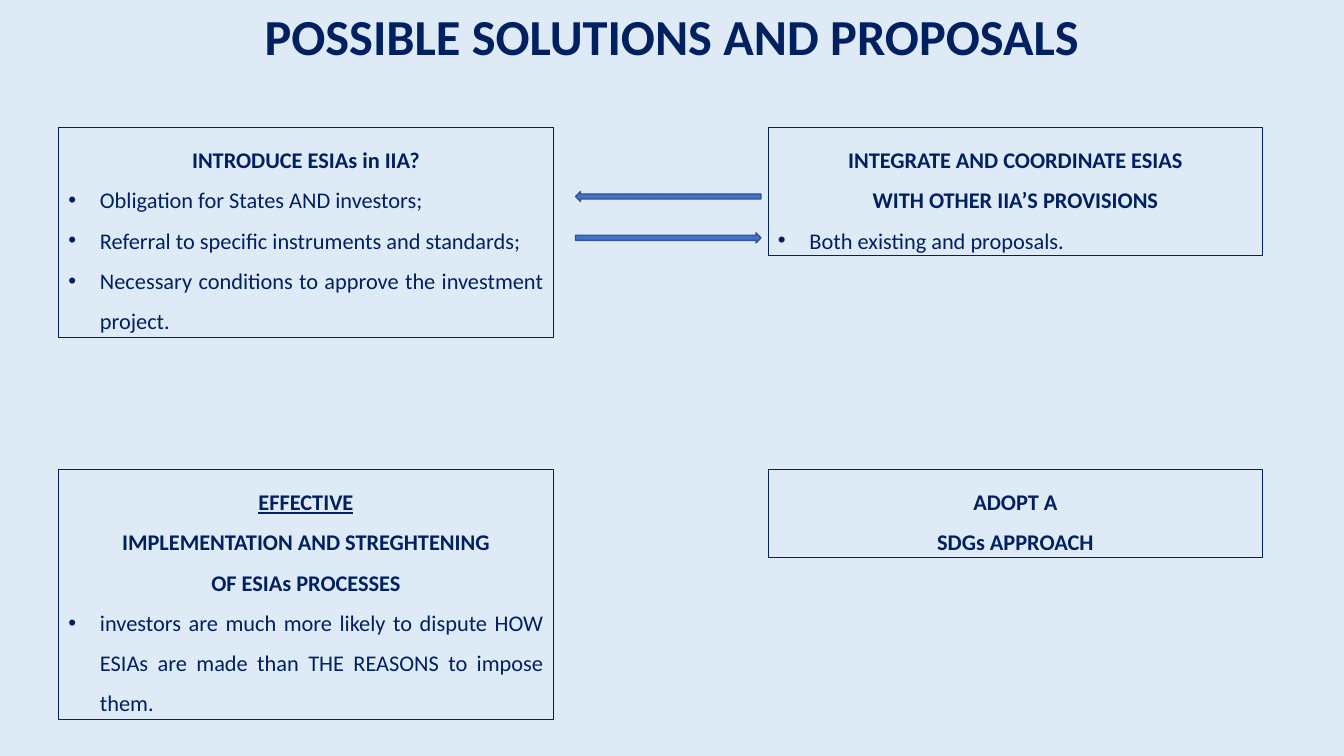
"""Build the slide of possible solutions and proposals."""
import pptx
import pptx.util
import pptx.dml.color
import pptx.enum.shapes
import pptx.enum.text
import pptx.oxml.ns
from lxml import etree

Pt = pptx.util.Pt
Align = pptx.enum.text.PP_ALIGN
Shape = pptx.enum.shapes.MSO_SHAPE
NAVY, BLUE, EDGE, PALE = "002060", "4472C4", "325491", "DEEBF7"

TITLE = "POSSIBLE SOLUTIONS AND PROPOSALS"
COLS, ROWS, WIDTH = (41.8, 548.6), (91.4, 335.5), 353.5
BOXES = [
    (0, 0, 149.8, "", ["INTRODUCE ESIAs in IIA?"],
     ["Obligation for States AND investors;",
      "Referral to specific instruments and standards;",
      "Necessary conditions to approve the investment project."]),
    (0, 1, 178.6, "EFFECTIVE",
     ["IMPLEMENTATION AND STREGHTENING\vOF ESIAs PROCESSES"],
     ["investors are much more likely to dispute HOW ESIAs are made "
      "than THE REASONS to impose them."]),
    (1, 0, 91.4, "",
     ["INTEGRATE AND COORDINATE ESIAS", "WITH OTHER IIA’S PROVISIONS"],
     ["Both existing and proposals."]),
    (1, 1, 62.6, "", ["ADOPT A\vSDGs APPROACH"], []),
]
ARROWS = [(Shape.LEFT_ARROW, 136.8), (Shape.RIGHT_ARROW, 166.3)]


def color(code):
    return pptx.dml.color.RGBColor.from_string(code)


def style(para, size, bold, align):
    font = para.font
    font.name, font.size, font.bold = "Calibri", Pt(size), bold
    font.color.rgb = color(NAVY)
    para.alignment = align


def bullet(para):
    props = para._p.get_or_add_pPr()
    props.set("marL", str(Pt(22.5)))
    props.set("indent", str(Pt(-22.5)))
    for tag, key, value in (("a:buFont", "typeface", "Arial"),
                            ("a:buChar", "char", "•")):
        node = etree.SubElement(props, pptx.oxml.ns.qn(tag))
        node.set(key, value)
        props.insert_element_before(node, "a:tabLst", "a:defRPr", "a:extLst")


def draw(kind, left, top, width, height, fill, line, weight):
    shape = slide.shapes.add_shape(kind, Pt(left), Pt(top), Pt(width), Pt(height))
    shape.shadow.inherit = False
    if fill:
        shape.fill.solid()
        shape.fill.fore_color.rgb = color(fill)
    else:
        shape.fill.background()
    shape.line.color.rgb = color(line)
    shape.line.width = Pt(weight)
    return shape


def write(frame, lead, heads, items):
    frame.word_wrap = True
    frame.auto_size = pptx.enum.text.MSO_AUTO_SIZE.SHAPE_TO_FIT_TEXT
    frame.vertical_anchor = pptx.enum.text.MSO_ANCHOR.TOP
    for i, text in enumerate(heads + items):
        para = frame.paragraphs[0] if i == 0 else frame.add_paragraph()
        head = i < len(heads)
        if i == 0 and lead:
            run = para.add_run()
            run.text = lead
            run.font.underline = True
            para.add_line_break()
        for j, part in enumerate(text.split("\v")):
            if j:
                para.add_line_break()
            para.add_run().text = part
        style(para, 16, head, Align.CENTER if head else Align.JUSTIFY)
        para.line_spacing = 1.5
        if not head:
            bullet(para)


deck = pptx.Presentation()
deck.slide_width, deck.slide_height = Pt(960), Pt(540)
slide = deck.slides.add_slide(deck.slide_layouts[6])
slide.background.fill.solid()
slide.background.fill.fore_color.rgb = color(PALE)

title = slide.shapes.add_textbox(0, 0, Pt(960), Pt(51)).text_frame
title.word_wrap = True
title.text = TITLE
style(title.paragraphs[0], 36, True, Align.CENTER)

for col, row, height, lead, heads, items in BOXES:
    box = draw(Shape.RECTANGLE, COLS[col], ROWS[row], WIDTH, height, None, NAVY, 0.75)
    write(box.text_frame, lead, heads, items)

for kind, top in ARROWS:
    draw(kind, 411.1, top, 132.5, 7.2, BLUE, EDGE, 1)

deck.save("out.pptx")
